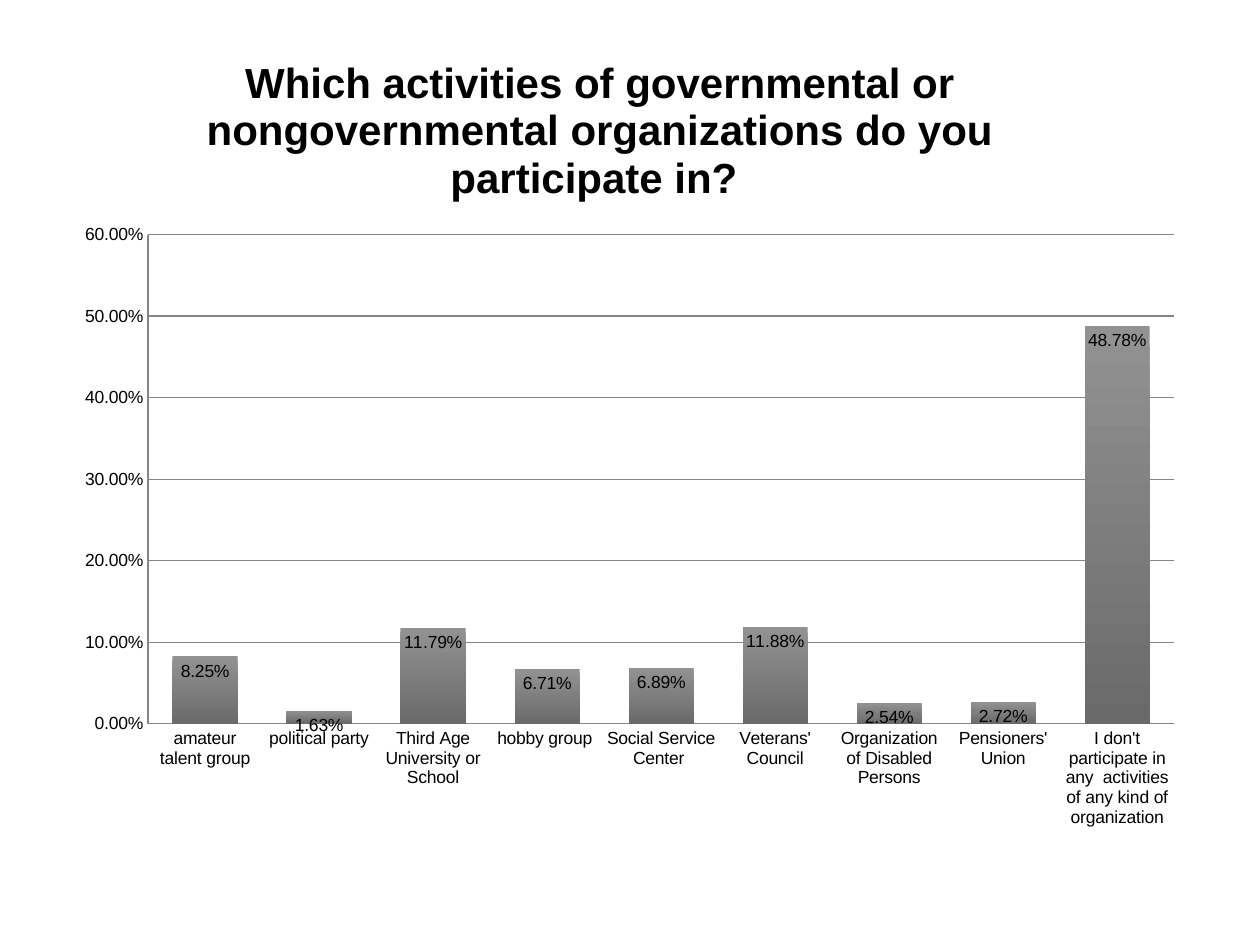
from lxml import etree
from pptx import Presentation
from pptx.chart.data import CategoryChartData
from pptx.dml.color import RGBColor
from pptx.enum.chart import XL_CHART_TYPE, XL_LABEL_POSITION, XL_TICK_MARK
from pptx.oxml.ns import qn
from pptx.util import Inches, Pt

COLUMNS = XL_CHART_TYPE.COLUMN_CLUSTERED
INSIDE_END = XL_LABEL_POSITION.INSIDE_END
NO_TICKS = XL_TICK_MARK.NONE

TITLE = ("Which activities of governmental or nongovernmental organizations "
         "do you participate in? ")
ANSWERS = {
    "amateur talent group": 0.0825,
    "political party": 0.0163,
    "Third Age University or School": 0.1179,
    "hobby group ": 0.0671,
    "Social Service Center ": 0.0689,
    "Veterans' Council": 0.1188,
    "Organization of Disabled Persons": 0.0254,
    "Pensioners' Union": 0.0272,
    "I don't participate in any  activities of any kind of organization": 0.4878,
}
PERCENT = "0.00%"


def color(value):
    return RGBColor.from_string(value)


def set_layout(parent, following, **settings):
    """Place a chart part by fractions of the chart, before the element named following."""
    for old in parent.findall(qn("c:layout")):
        parent.remove(old)
    layout = etree.Element(qn("c:layout"))
    manual = etree.SubElement(layout, qn("c:manualLayout"))
    for name, value in settings.items():
        etree.SubElement(manual, qn(f"c:{name}")).set("val", str(value))
    parent.find(qn(following)).addprevious(layout)


deck = Presentation()
deck.slide_width, deck.slide_height = Inches(10), Inches(7.5)
page = deck.slides.add_slide(deck.slide_layouts[6])

data = CategoryChartData(number_format=PERCENT)
data.categories = ANSWERS.keys()
data.add_series("Series 1", ANSWERS.values())
chart = page.shapes.add_chart(
    COLUMNS, Inches(0.5), Inches(0.25), Inches(9), Inches(6.45), data).chart
chart.has_legend = False
chart.font.name = "Arial"
chart.font.size = Pt(10)
chart.font.color.rgb = color("000000")

# Title
chart.has_title = True
title = chart.chart_title
title.include_in_layout = False
span = title.text_frame.paragraphs[0].add_run()
span.text = TITLE
span.font.name = "Arial"
span.font.size = Pt(24)
span.font.bold = True
span.font.color.rgb = color("000000")
set_layout(title._element, "c:overlay", xMode="edge", yMode="edge", x=0.12, y=0.02)

# Axes
for axis in (chart.category_axis, chart.value_axis):
    axis.major_tick_mark = axis.minor_tick_mark = NO_TICKS
    axis.format.line.color.rgb = color("868686")
    axis.format.line.width = Pt(0.75)
chart.category_axis.has_major_gridlines = False
scale = chart.value_axis
scale.minimum_scale, scale.maximum_scale, scale.major_unit = 0, 0.6, 0.1
scale.tick_labels.number_format = PERCENT
scale.tick_labels.number_format_is_linked = False
scale.has_major_gridlines = True
scale.major_gridlines.format.line.color.rgb = color("868686")
scale.major_gridlines.format.line.width = Pt(0.75)

# Columns
plot = chart.plots[0]
plot.vary_by_categories = False
plot.gap_width, plot.overlap = 75, 40
fill = plot.series[0].format.fill
fill.gradient()
fill.gradient_angle = 270
for stop, shade in zip(fill.gradient_stops, ("929292", "6A6A6A")):
    stop.color.rgb = color(shade)

plot.has_data_labels = True
labels = plot.data_labels
labels.show_value = True
labels.position = INSIDE_END
labels.number_format = PERCENT
labels.number_format_is_linked = False

plot_area = chart._chartSpace.find(".//" + qn("c:plotArea"))
set_layout(plot_area, "c:barChart", layoutTarget="inner", xMode="edge", yMode="edge",
           x=0.075, y=0.25, w=0.905, h=0.602)

deck.save("out.pptx")
